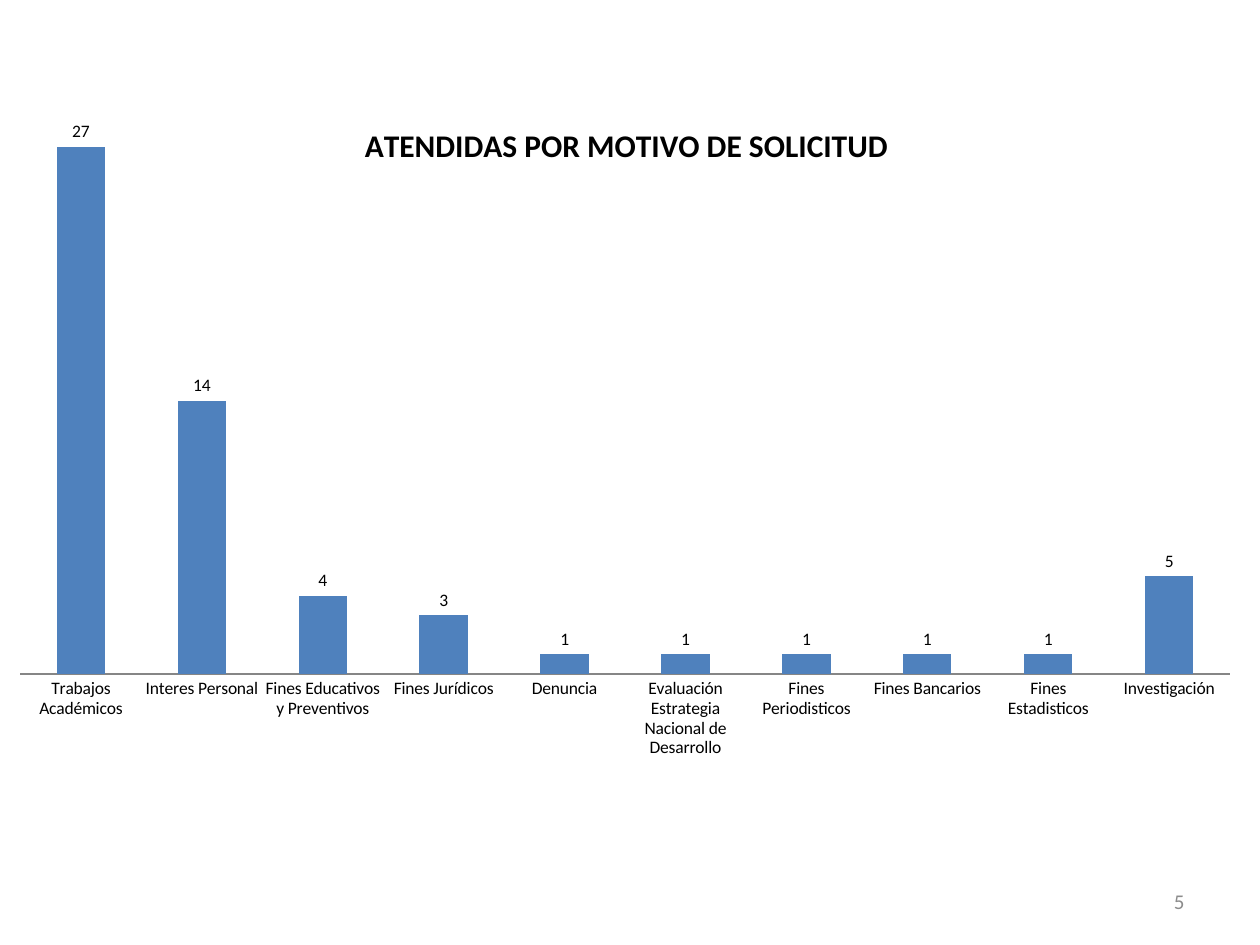
import pptx
import pptx.chart.data
import pptx.dml.color
import pptx.enum.chart
import pptx.enum.text
import pptx.oxml
import pptx.oxml.ns
import pptx.util
from pptx.util import Cm

FONT = "Calibri"
COLORS = {"text": "000000", "bar": "4F81BD", "axis": "868686", "number": "8C8C8C"}

REQUESTS = {
    "Trabajos Académicos": 27,
    "Interes Personal": 14,
    "Fines Educativos y Preventivos": 4,
    "Fines Jurídicos": 3,
    "Denuncia": 1,
    "Evaluación Estrategia Nacional de Desarrollo": 1,
    "Fines Periodisticos": 1,
    "Fines Bancarios": 1,
    "Fines Estadisticos": 1,
    "Investigación": 5,
}


def rgb(name):
    return pptx.dml.color.RGBColor.from_string(COLORS[name])


def format_font(font, size, color="text", bold=False):
    font.name = FONT
    font.size = pptx.util.Pt(size)
    font.bold = bold
    font.color.rgb = rgb(color)


def write_text(text_frame, text, align="CENTER", **font_format):
    paragraph = text_frame.paragraphs[0]
    paragraph.alignment = getattr(pptx.enum.text.PP_ALIGN, align)
    run = paragraph.add_run()
    run.text = text
    format_font(run.font, **font_format)


def make_layout(**values):
    """Build a manual layout element from fractions of the chart."""
    settings = "".join(f'<c:{tag} val="{value}"/>' for tag, value in values.items())
    namespace = pptx.oxml.ns.nsdecls("c")
    return pptx.oxml.parse_xml(
        f"<c:layout {namespace}><c:manualLayout>{settings}</c:manualLayout></c:layout>"
    )


def place_title(chart, x, y):
    title = chart.chart_title._element
    for layout in title.findall(pptx.oxml.ns.qn("c:layout")):
        title.remove(layout)
    title.find(pptx.oxml.ns.qn("c:tx")).addnext(
        make_layout(xMode="edge", yMode="edge", x=x, y=y)
    )
    chart.chart_title.include_in_layout = True


def place_plot(chart, x, y, w, h):
    plot_area = chart._chartSpace.chart.plotArea
    for layout in plot_area.findall(pptx.oxml.ns.qn("c:layout")):
        plot_area.remove(layout)
    plot_area.insert(0, make_layout(layoutTarget="inner", xMode="edge", yMode="edge",
                                    x=x, y=y, w=w, h=h))


def add_column_chart(slide, title, values, left, top, width, height):
    data = pptx.chart.data.CategoryChartData()
    data.categories = list(values)
    data.add_series("Series 1", list(values.values()))
    chart = slide.shapes.add_chart(
        pptx.enum.chart.XL_CHART_TYPE.COLUMN_CLUSTERED, left, top, width, height, data
    ).chart
    chart.has_legend = False
    format_font(chart.font, 10)

    # Title over the plot
    write_text(chart.chart_title.text_frame, title, size=18, bold=True)
    place_title(chart, 0.28, 0.04)
    place_plot(chart, 0, 0, 1, 0.8)

    # Axes
    no_ticks = pptx.enum.chart.XL_TICK_MARK.NONE
    chart.category_axis.major_tick_mark = no_ticks
    chart.category_axis.format.line.color.rgb = rgb("axis")
    chart.value_axis.minimum_scale = 0
    chart.value_axis.maximum_scale = 30
    chart.value_axis.has_major_gridlines = False
    chart.value_axis.visible = False

    # Columns and their labels
    plot = chart.plots[0]
    plot.vary_by_categories = False
    plot.gap_width = 150
    plot.overlap = -25
    series = plot.series[0]
    series.format.fill.solid()
    series.format.fill.fore_color.rgb = rgb("bar")
    labels = series.data_labels
    labels.show_value = True
    labels.position = pptx.enum.chart.XL_LABEL_POSITION.OUTSIDE_END
    format_font(labels.font, 10)


def add_text_box(slide, text, left, top, width, height, **text_format):
    text_frame = slide.shapes.add_textbox(left, top, width, height).text_frame
    text_frame.word_wrap = True
    text_frame.vertical_anchor = pptx.enum.text.MSO_ANCHOR.MIDDLE
    write_text(text_frame, text, **text_format)


def main():
    presentation = pptx.Presentation()
    presentation.slide_width = Cm(25.4)
    presentation.slide_height = Cm(19.05)
    slide = presentation.slides.add_slide(presentation.slide_layouts[6])

    add_column_chart(slide, "ATENDIDAS POR MOTIVO DE SOLICITUD", REQUESTS,
                     Cm(0.4), Cm(1.78), Cm(24.4), Cm(14.76))
    # Slide number
    add_text_box(slide, "5", Cm(18.2), Cm(17.66), Cm(5.93), Cm(1.01),
                 align="RIGHT", size=12, color="number")

    presentation.save("out.pptx")


if __name__ == "__main__":
    main()
